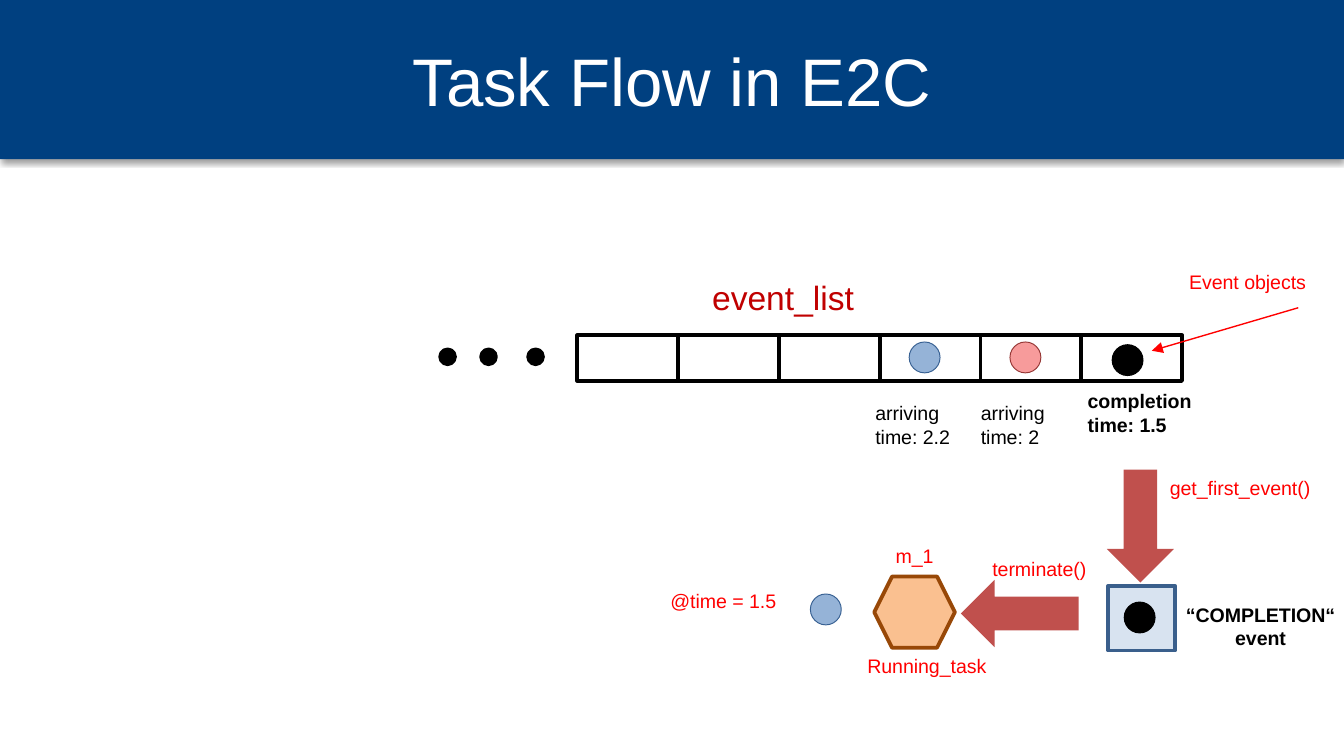
import pptx
import pptx.util
import pptx.oxml
import pptx.dml.color
import pptx.enum.shapes
import pptx.enum.text
import lxml.etree

RGB = pptx.dml.color.RGBColor
KIND = pptx.enum.shapes.MSO_SHAPE
ALIGN = pptx.enum.text.PP_ALIGN
MID = pptx.enum.text.MSO_ANCHOR.MIDDLE
Pt = pptx.util.Pt

PX = 4572
NAVY = RGB(0x00, 0x40, 0x80)
WHITE = RGB(0xFF, 0xFF, 0xFF)
BLACK = RGB(0x00, 0x00, 0x00)
RED = RGB(0xFF, 0x00, 0x00)
WINE = RGB(0xC0, 0x00, 0x00)
BRICK = RGB(0xC0, 0x50, 0x4D)
PINK = RGB(0xF7, 0x9B, 0x9B)
MAROON = RGB(0x95, 0x37, 0x35)
SKY = RGB(0x95, 0xB3, 0xD7)
STEEL = RGB(0x37, 0x60, 0x92)
BLUE = RGB(0x4F, 0x81, 0xBD)
SLATE = RGB(0x3A, 0x5F, 0x8C)
PEACH = RGB(0xFA, 0xC0, 0x90)
BROWN = RGB(0x98, 0x48, 0x07)

NS = "http://schemas.openxmlformats.org/drawingml/2006/main"
SHADOW = (
    f'<a:effectLst xmlns:a="{NS}">'
    '<a:outerShdw blurRad="39370" dist="20320" dir="5400000" rotWithShape="0">'
    '<a:srgbClr val="000000"><a:alpha val="38000"/></a:srgbClr>'
    "</a:outerShdw></a:effectLst>"
)
LABEL = {"name": "Arial", "size": Pt(10.5), "bold": False}
STRONG = {**LABEL, "bold": True}
HEAD = {**LABEL, "size": Pt(18)}
TITLE = {**LABEL, "size": Pt(36)}


def scale(*nums):
    return [num * PX for num in nums]


def add_shape(slide, kind, box, fill, line=None, width=2, turn=0):
    shape = slide.shapes.add_shape(kind, *scale(*box))
    shape.shadow.inherit = False
    shape.rotation = turn
    shape.fill.solid()
    shape.fill.fore_color.rgb = fill
    if line is None:
        shape.line.fill.background()
    else:
        shape.line.color.rgb = line
        shape.line.width = Pt(width)
    return shape


def add_ball(slide, left, top, fill, line):
    add_shape(slide, KIND.OVAL, (left, top, 46, 46), fill, line, 0.5)


def add_text(slide, box, text, color=RED, style=LABEL, align=ALIGN.LEFT):
    frame = slide.shapes.add_textbox(*scale(*box)).text_frame
    frame.word_wrap = True
    frame.text = text
    for para in frame.paragraphs:
        para.alignment = align
        for key, value in style.items():
            setattr(para.font, key, value)
        para.font.color.rgb = color
    return frame


def add_arrow(slide, start, end):
    arrow = slide.shapes.add_connector(
        pptx.enum.shapes.MSO_CONNECTOR.STRAIGHT, *scale(*start, *end)
    )
    arrow.line.color.rgb = RED
    arrow.line.width = Pt(0.75)
    line = arrow.line._get_or_add_ln()
    lxml.etree.SubElement(line, f"{{{NS}}}tailEnd", type="triangle")
    lxml.etree.SubElement(arrow._element.spPr, f"{{{NS}}}effectLst")


def add_banner(slide):
    bar = add_shape(slide, KIND.RECTANGLE, (0, 0, 2000, 237), NAVY)
    props = bar._element.spPr
    props.remove(props.find(f"{{{NS}}}effectLst"))
    props.append(pptx.oxml.parse_xml(SHADOW))
    title = add_text(slide, (100, 24, 1800, 188), "Task Flow in E2C",
                     WHITE, TITLE, ALIGN.CENTER)
    title.vertical_anchor = MID


def add_queue(slide):
    for col in reversed(range(6)):
        add_shape(slide, KIND.RECTANGLE, (859 + 150 * col, 499, 150, 68),
                  WHITE, BLACK)
    for left in (655, 716, 786):
        add_shape(slide, KIND.OVAL, (left, 520, 22, 22), BLACK, BLACK)
    add_text(slide, (1040, 402, 318, 80), "event_list", WINE, HEAD)
    add_ball(slide, 1353, 509, SKY, STEEL)
    add_ball(slide, 1503, 509, PINK, MAROON)
    add_ball(slide, 1655, 513, BLACK, BLACK)
    add_text(slide, (1283, 587, 232, 90), "arriving\ntime: 2.2", BLACK)
    add_text(slide, (1440, 587, 232, 90), "arriving\ntime: 2", BLACK)
    add_text(slide, (1599, 569, 232, 90), "completion\ntime: 1.5",
             BLACK, STRONG)
    add_text(slide, (1750, 392, 232, 56), "Event objects")
    add_arrow(slide, (1932, 458), (1714, 522))


def add_flow(slide):
    event = add_shape(slide, KIND.RECTANGLE, (1649, 872, 100, 96), BLUE, SLATE)
    tint = event._element.spPr.find(f"{{{NS}}}solidFill")[0]
    lxml.etree.SubElement(tint, f"{{{NS}}}alpha", val="22000")
    add_ball(slide, 1673, 896, BLACK, BLACK)
    add_shape(slide, KIND.RIGHT_ARROW, (1613, 733, 168, 100), BRICK, turn=90)
    add_shape(slide, KIND.RIGHT_ARROW, (1430, 863, 175, 100), BRICK, turn=180)
    add_shape(slide, KIND.HEXAGON, (1301, 858, 120, 106), PEACH, BROWN)
    add_ball(slide, 1206, 884, SKY, STEEL)
    add_text(slide, (1721, 698, 304, 56), "get_first_event()")
    add_text(slide, (1732, 887, 288, 90), "“COMPLETION“ event",
             BLACK, STRONG, ALIGN.CENTER)
    add_text(slide, (1457, 819, 210, 56), "terminate()")
    add_text(slide, (1311, 800, 100, 56), "m_1", align=ALIGN.CENTER)
    add_text(slide, (1271, 963, 242, 56), "Running_task")
    add_text(slide, (978, 866, 242, 56), "@time = 1.5")


def main():
    deck = pptx.Presentation()
    deck.slide_width, deck.slide_height = scale(2000, 1125)
    slide = deck.slides.add_slide(deck.slide_layouts[6])
    add_banner(slide)
    add_queue(slide)
    add_flow(slide)
    deck.save("out.pptx")


if __name__ == "__main__":
    main()
